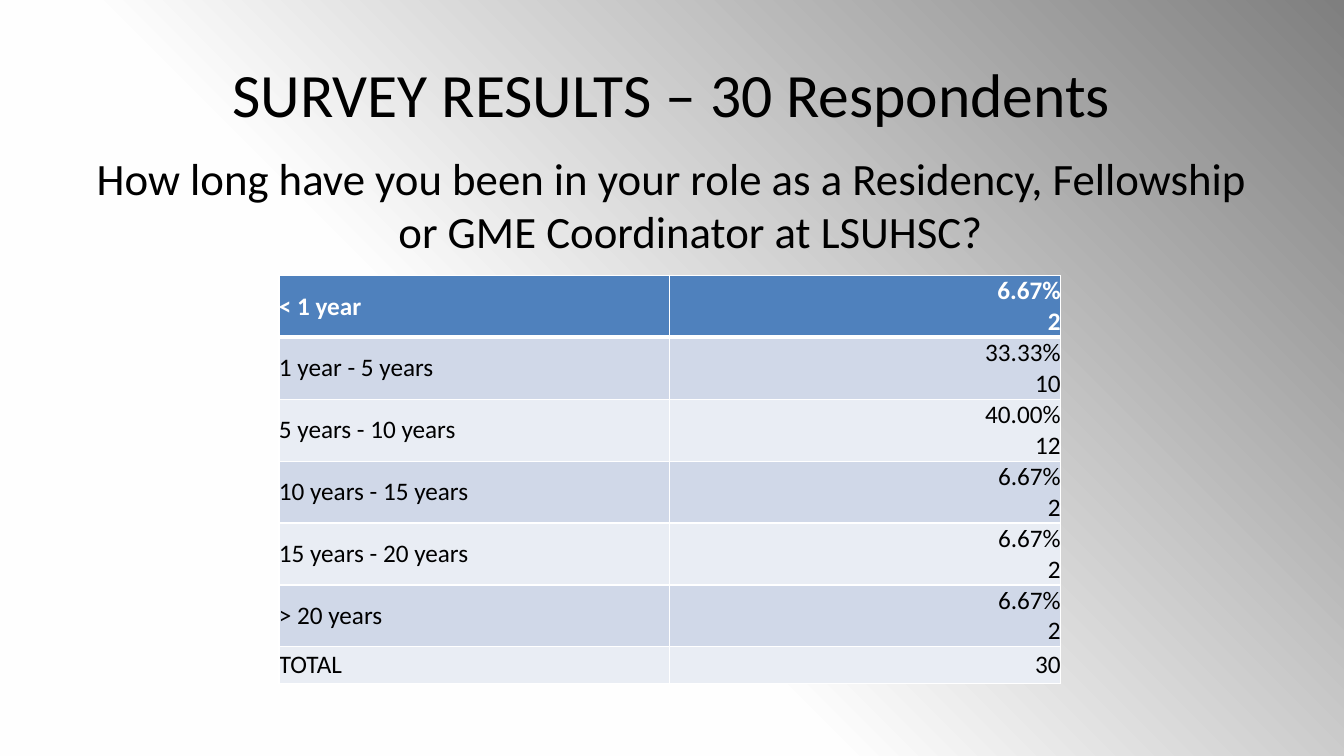
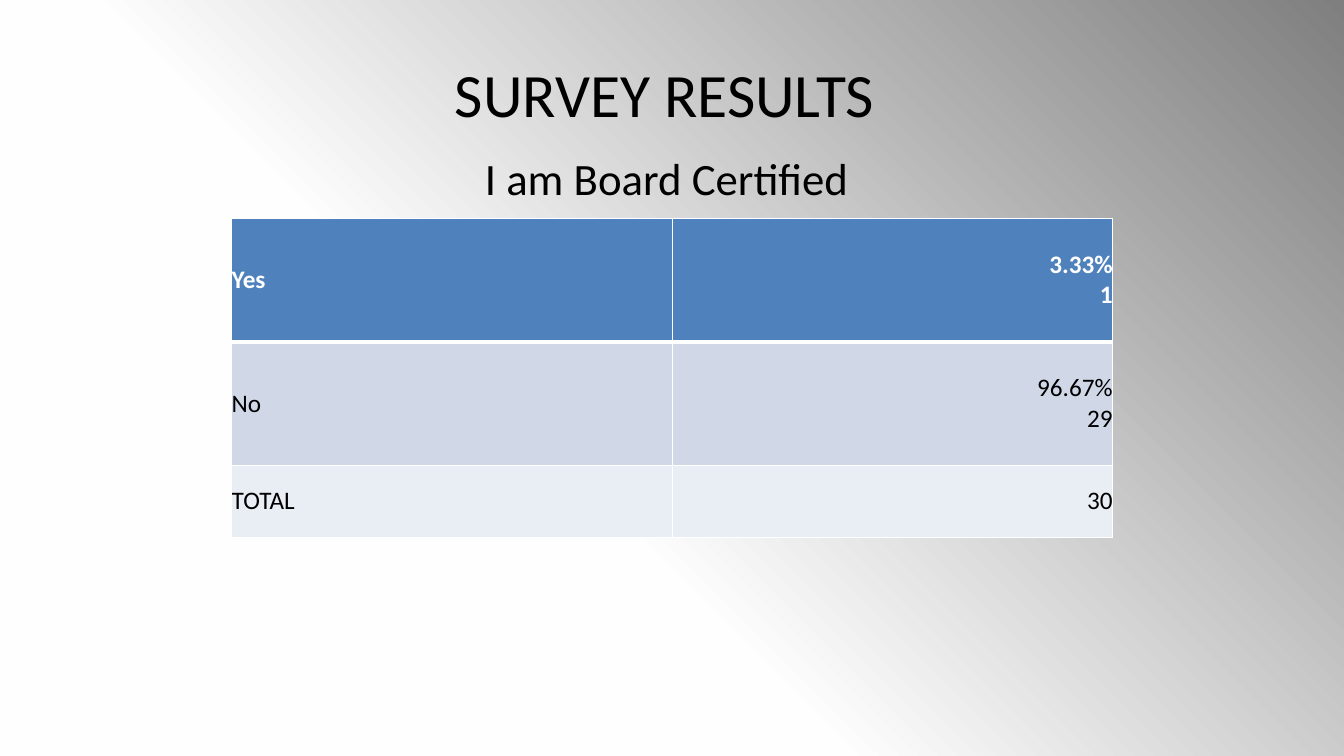
import dataclasses

import lxml.etree
import pptx
import pptx.dml.color
import pptx.enum.text
import pptx.oxml
import pptx.oxml.ns
import pptx.util

Cm = pptx.util.Cm
Pt = pptx.util.Pt
ALIGN = pptx.enum.text.PP_ALIGN
MIDDLE = pptx.enum.text.MSO_ANCHOR.MIDDLE


@dataclasses.dataclass(frozen=True)
class Theme:
    font: str = "Calibri"
    title_size: int = 44
    body_size: int = 32
    table_size: int = 18
    text: str = "000000"
    header_text: str = "FFFFFF"
    header_fill: str = "4F81BD"
    band_fills: tuple = ("D0D8E8", "E9EDF4")
    border: str = "FFFFFF"
    border_width: int = 1
    header_rule_width: int = 3
    backdrop: tuple = ((0, "FFFFFF"), (40, "FEFEFE"), (100, "7F7F7F"))


THEME = Theme()


@dataclasses.dataclass(frozen=True)
class Survey:
    """One question; each answer is a label followed by its values."""
    title: str
    question: str
    answers: tuple
    left: float
    top: float
    column_width: float
    answer_height: float
    total_height: float


SURVEYS = (
    Survey(
        title="SURVEY RESULTS – 30 Respondents",
        question="How long have you been in your role as a Residency, "
                 "Fellowship or GME Coordinator at LSUHSC?",
        answers=(
            ("< 1 year", "6.67%", "2"),
            ("1 year - 5 years", "33.33%", "10"),
            ("5 years - 10 years", "40.00%", "12"),
            ("10 years - 15 years", "6.67%", "2"),
            ("15 years - 20 years", "6.67%", "2"),
            ("> 20 years", "6.67%", "2"),
            ("TOTAL", "30"),
        ),
        left=7.03, top=6.94, column_width=9.85,
        answer_height=1.56, total_height=0.92,
    ),
    Survey(
        title="SURVEY RESULTS ",
        question="I am Board Certified ",
        answers=(
            ("Yes", "3.33%", "1"),
            ("No", "96.67%", "29"),
            ("TOTAL", "30"),
        ),
        left=5.84, top=5.5, column_width=11.1,
        answer_height=3.11, total_height=1.82,
    ),
)


def rgb(color):
    return pptx.dml.color.RGBColor.from_string(color)


def add_span(para, text, size, color=THEME.text, bold=False):
    span = para.add_run()
    span.text = text
    span.font.name = THEME.font
    span.font.size = Pt(size)
    span.font.bold = bold
    span.font.color.rgb = rgb(color)


def set_backdrop(master):
    """Give the master a path gradient that grows from the bottom left."""
    master.background.fill.solid()
    properties = master.element.xpath("p:cSld/p:bg/p:bgPr")[0]
    stops = "".join(
        f'<a:gs pos="{place * 1000}"><a:srgbClr val="{color}"/></a:gs>'
        for place, color in THEME.backdrop
    )
    gradient = pptx.oxml.parse_xml(
        f'<a:gradFill {pptx.oxml.ns.nsdecls("a")} rotWithShape="1">'
        f'<a:gsLst>{stops}</a:gsLst><a:path path="circle">'
        '<a:fillToRect t="100000" r="100000"/></a:path></a:gradFill>'
    )
    properties.replace(properties[0], gradient)


def place_placeholders(layout):
    frames = ((0, 0.76, 3.18), (1, 3.66, 12.57))
    for index, top, height in frames:
        box = layout.placeholders[index]
        box.left, box.top = Cm(1.69), Cm(top)
        box.width, box.height = Cm(30.48), Cm(height)


def fill_title(page, text):
    frame = page.shapes.title.text_frame
    frame.vertical_anchor = MIDDLE
    para = frame.paragraphs[0]
    para.alignment = ALIGN.CENTER
    add_span(para, text, THEME.title_size)


def fill_question(page, text):
    para = page.placeholders[1].text_frame.paragraphs[0]
    properties = para._p.get_or_add_pPr()
    lxml.etree.SubElement(properties, pptx.oxml.ns.qn("a:buNone"))
    para.alignment = ALIGN.CENTER
    para.space_before = Pt(0)
    add_span(para, text, THEME.body_size)


def set_borders(cell, row):
    """Draw all four edges, with a heavier rule below the header row."""
    heavy_edge = {0: "lnB", 1: "lnT"}.get(row)
    properties = cell._tc.get_or_add_tcPr()
    for place, edge in enumerate(("lnL", "lnR", "lnT", "lnB")):
        width = (THEME.header_rule_width if edge == heavy_edge
                 else THEME.border_width)
        line = pptx.oxml.parse_xml(
            f'<a:{edge} {pptx.oxml.ns.nsdecls("a")} w="{Pt(width)}">'
            f'<a:solidFill><a:srgbClr val="{THEME.border}"/></a:solidFill>'
            f'</a:{edge}>'
        )
        properties.insert(place, line)


def fill_cell(cell, row, lines, alignment):
    header = row == 0
    cell.margin_left = cell.margin_right = 0
    cell.margin_top = cell.margin_bottom = 0
    cell.vertical_anchor = MIDDLE
    cell.fill.solid()
    cell.fill.fore_color.rgb = rgb(
        THEME.header_fill if header else THEME.band_fills[(row - 1) % 2])
    set_borders(cell, row)
    frame = cell.text_frame
    for number, text in enumerate(lines):
        para = frame.add_paragraph() if number else frame.paragraphs[0]
        para.alignment = alignment
        add_span(para, text, THEME.table_size,
                 THEME.header_text if header else THEME.text, header)


def add_answer_table(page, survey):
    count = len(survey.answers)
    heights = [survey.answer_height] * (count - 1) + [survey.total_height]
    table = page.shapes.add_table(
        count, 2, Cm(survey.left), Cm(survey.top),
        Cm(2 * survey.column_width), Cm(sum(heights))).table
    table.horz_banding = False
    for column in table.columns:
        column.width = Cm(survey.column_width)
    for row, (label, *values) in enumerate(survey.answers):
        table.rows[row].height = Cm(heights[row])
        fill_cell(table.cell(row, 0), row, [label], ALIGN.LEFT)
        fill_cell(table.cell(row, 1), row, values, ALIGN.RIGHT)


def main():
    deck = pptx.Presentation()
    deck.slide_width, deck.slide_height = Cm(33.87), Cm(19.05)
    set_backdrop(deck.slide_master)
    layout = deck.slide_layouts[1]
    place_placeholders(layout)
    for survey in SURVEYS:
        page = deck.slides.add_slide(layout)
        fill_title(page, survey.title)
        fill_question(page, survey.question)
        add_answer_table(page, survey)
    deck.save("out.pptx")


if __name__ == "__main__":
    main()
